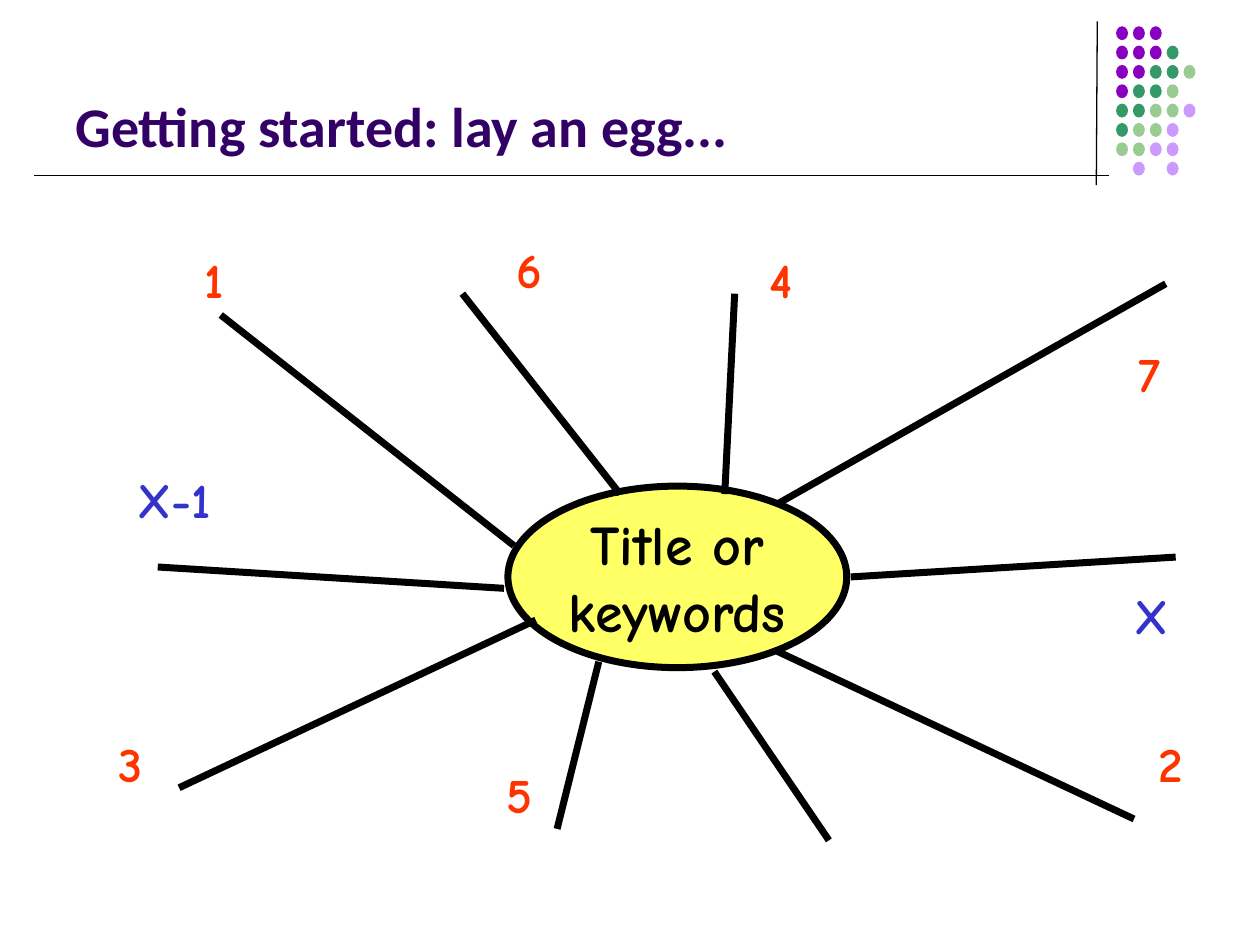
from lxml import etree
from pptx import Presentation
from pptx.dml.color import RGBColor
from pptx.enum import shapes, text
from pptx.oxml.ns import qn
from pptx.util import Cm, Pt

COLORS = {
    "black": "000000", "title": "330066", "yolk": "FFFF66",
    "red": "FF3300", "blue": "3333CC",
    "P": "8A00C0", "G": "339966", "L": "99CC91", "V": "CC99FF",
}
HAND = "Comic Neue"

# One letter per dot, keyed to COLORS; a space leaves a gap.
DOT_ROWS = ["PPP", "PPPG", "PPGGL", "PGGL", "GGLLV", "GLLV", "LLVV", " V V"]
DOT_LEFT, DOT_TOP, DOT_STEP_X, DOT_STEP_Y = 22.5, 0.53, 0.34, 0.39

RULES = [  # start x, start y, end x, end y, width in points
    (22.12, 0.43, 22.1, 3.73, 0.75),
    (0.69, 3.53, 22.35, 3.53, 0.5),
]
EGG = (10.24, 9.8, 6.83, 3.66)
SPOKES = [  # inner x, inner y, outer x, outer y
    (10.36, 11, 4.45, 6.35),
    (15.67, 13.13, 22.86, 16.51),
    (15.67, 10.16, 23.5, 5.72),
    (10.8, 12.5, 3.61, 15.88),
    (12.07, 13.34, 11.23, 16.71),
    (14.4, 13.54, 16.71, 16.94),
    (12.5, 9.96, 9.32, 5.92),
    (10.16, 11.86, 3.18, 11.43),
    (17.15, 11.63, 23.7, 11.23),
    (14.61, 9.96, 14.81, 5.92),
]
LABELS = [  # text, left, top, width, colour
    ("1", 3.76, 4.9, 1.12, "red"),
    ("2", 23.04, 14.66, 1.12, "red"),
    ("3", 2.08, 14.66, 1.12, "red"),
    ("4", 15.19, 4.9, 1.12, "red"),
    ("5", 9.91, 15.29, 1.12, "red"),
    ("6", 10.11, 4.7, 1.12, "red"),
    ("X", 22.61, 11.68, 1.22, "blue"),
    ("X-1", 2.29, 9.35, 2.44, "blue"),
    ("7", 22.61, 6.81, 1.12, "red"),
]
LABEL_HEIGHT = 1.45


def rgb(name):
    return RGBColor.from_string(COLORS[name])


def write(shape, lines, *, size, color, font=HAND, align=text.PP_ALIGN.CENTER,
          anchor=text.MSO_ANCHOR.TOP, wrap=False):
    frame = shape.text_frame
    frame.word_wrap = wrap
    frame.vertical_anchor = anchor
    frame.text = "\n".join(lines)
    for para in frame.paragraphs:
        para.alignment = align
        for span in para.runs:
            span.font.name = font
            span.font.size = Pt(size)
            span.font.bold = True
            span.font.color.rgb = rgb(color)


def add_box(page, left, top, width, height):
    return page.shapes.add_textbox(Cm(left), Cm(top), Cm(width), Cm(height))


def add_line(page, x1, y1, x2, y2, width):
    line = page.shapes.add_connector(
        shapes.MSO_CONNECTOR.STRAIGHT, Cm(x1), Cm(y1), Cm(x2), Cm(y2))
    line.line.color.rgb = rgb("black")
    line.line.width = Pt(width)
    etree.SubElement(line._element.spPr, qn("a:effectLst"))


def add_ellipse(parent, left, top, width, height, fill):
    oval = parent.shapes.add_shape(
        shapes.MSO_SHAPE.OVAL, Cm(left), Cm(top), Cm(width), Cm(height))
    oval.shadow.inherit = False
    oval.fill.solid()
    oval.fill.fore_color.rgb = rgb(fill)
    oval.line.fill.background()
    return oval


def add_dots(page):
    group = page.shapes.add_group_shape()
    for row, letters in enumerate(DOT_ROWS):
        for column, letter in enumerate(letters):
            if letter != " ":
                add_ellipse(group, DOT_LEFT + column * DOT_STEP_X,
                            DOT_TOP + row * DOT_STEP_Y, 0.24, 0.28, letter)


def main():
    deck = Presentation()
    deck.slide_width, deck.slide_height = Cm(25.4), Cm(19.05)
    page = deck.slides.add_slide(deck.slide_layouts[6])

    add_dots(page)
    for rule in RULES:
        add_line(page, *rule)
    write(add_box(page, 1.27, 0.33, 20.96, 3), ["Getting started: lay an egg..."],
          size=32, color="title", font="Calibri", align=text.PP_ALIGN.LEFT,
          anchor=text.MSO_ANCHOR.BOTTOM, wrap=True)

    egg = add_ellipse(page, *EGG, "yolk")
    egg.line.color.rgb = rgb("black")
    egg.line.width = Pt(4)
    write(egg, ["Title or", "keywords"], size=32, color="black",
          anchor=text.MSO_ANCHOR.MIDDLE)

    for spoke in SPOKES:
        add_line(page, *spoke, 4)
    for label, left, top, width, color in LABELS:
        write(add_box(page, left, top, width, LABEL_HEIGHT), [label],
              size=28, color=color)

    deck.save("out.pptx")


if __name__ == "__main__":
    main()
